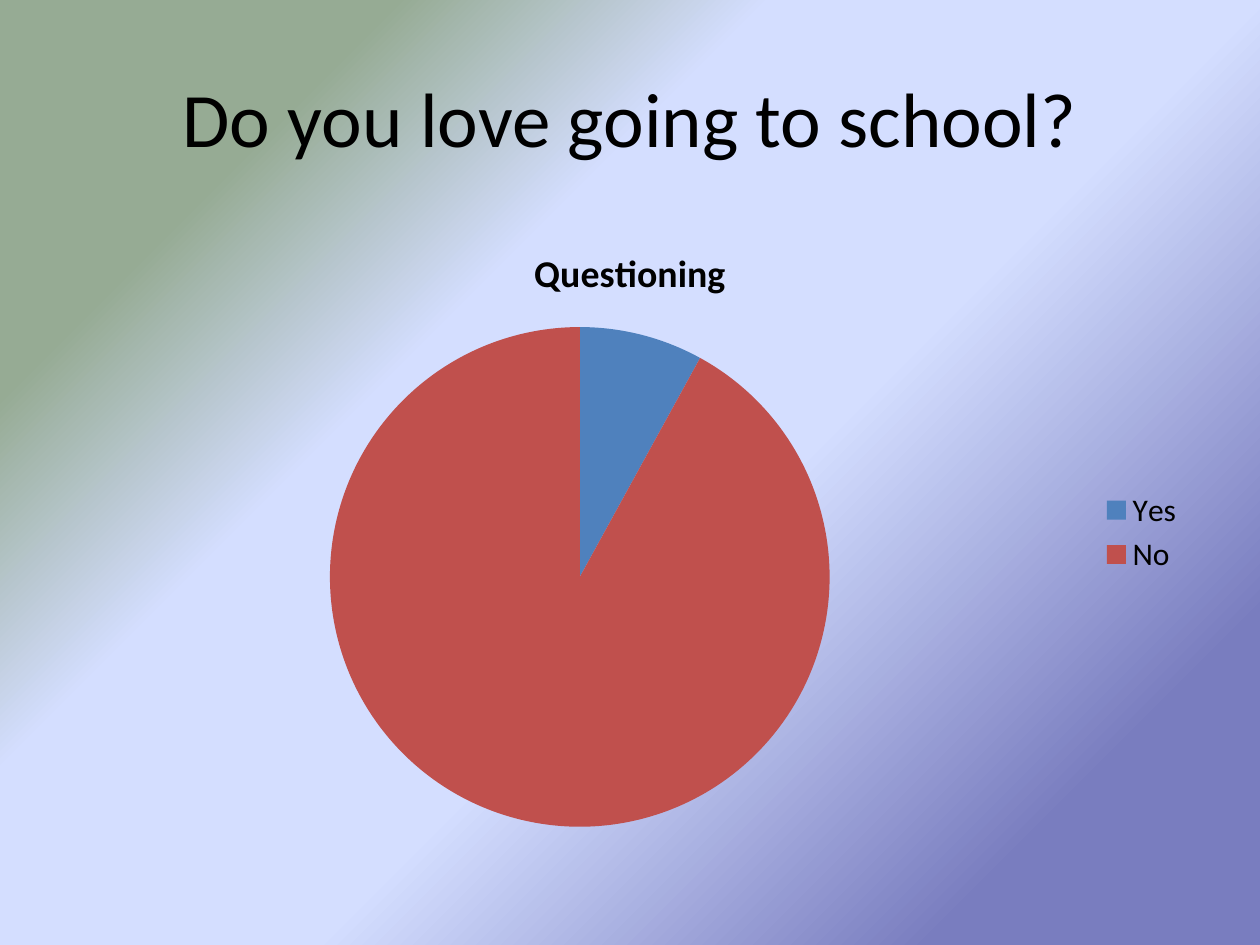
"""Build a survey slide with a pie chart on a diagonal gradient."""
import copy

import pptx
import pptx.chart.data
import pptx.dml.color
import pptx.enum.chart
import pptx.enum.text
import pptx.oxml.ns
import pptx.util

Pt = pptx.util.Pt


def paint(color, code):
    """Set a colour from a hex string."""
    color.rgb = pptx.dml.color.RGBColor.from_string(code)


def style(font, size, bold=False):
    """Set the common font in black."""
    font.name = "Calibri"
    font.size = Pt(size)
    font.bold = bold
    paint(font.color, "000000")


deck = pptx.Presentation()
deck.slide_width, deck.slide_height = Pt(720), Pt(540)
slide = deck.slides.add_slide(deck.slide_layouts[5])

fill = slide.background.fill
fill.gradient()
fill.gradient_angle = 135
shades = [(0.15, "797DBF"), (0.43, "D4DEFF"), (0.65, "D4DEFF"), (0.82, "96AB94")]
stops = slide.element.find(".//" + pptx.oxml.ns.qn("a:gsLst"))
while len(stops) < len(shades):
    stops.append(copy.deepcopy(stops[0]))
for stop, (place, code) in zip(fill.gradient_stops, shades):
    stop.position = place
    paint(stop.color, code)

title = slide.shapes.title
title.left, title.top, title.width, title.height = Pt(36), Pt(21.6), Pt(648), Pt(90)
frame = title.text_frame
frame.vertical_anchor = pptx.enum.text.MSO_ANCHOR.MIDDLE
para = frame.paragraphs[0]
para.alignment = pptx.enum.text.PP_ALIGN.CENTER
run = para.add_run()
run.text = "Do you love going to school?"
style(run.font, 44)

data = pptx.chart.data.CategoryChartData()
data.categories = ["Yes", "No"]
data.add_series("Questioning", (8, 92))
chart = slide.shapes.add_chart(
    pptx.enum.chart.XL_CHART_TYPE.PIE, Pt(36), Pt(126), Pt(648), Pt(356.4), data
).chart
style(chart.font, 18)

chart.has_title = True
run = chart.chart_title.text_frame.paragraphs[0].add_run()
run.text = "Questioning"
style(run.font, 21.6, True)
chart.chart_title.include_in_layout = False

chart.has_legend = True
chart.legend.position = pptx.enum.chart.XL_LEGEND_POSITION.RIGHT
chart.legend.include_in_layout = False
style(chart.legend.font, 18)

plot = chart.plots[0]
plot.vary_by_categories = True
for index, code in enumerate(["4F81BD", "C0504D"]):
    slice_fill = plot.series[0].points[index].format.fill
    slice_fill.solid()
    paint(slice_fill.fore_color, code)

deck.save("out.pptx")
